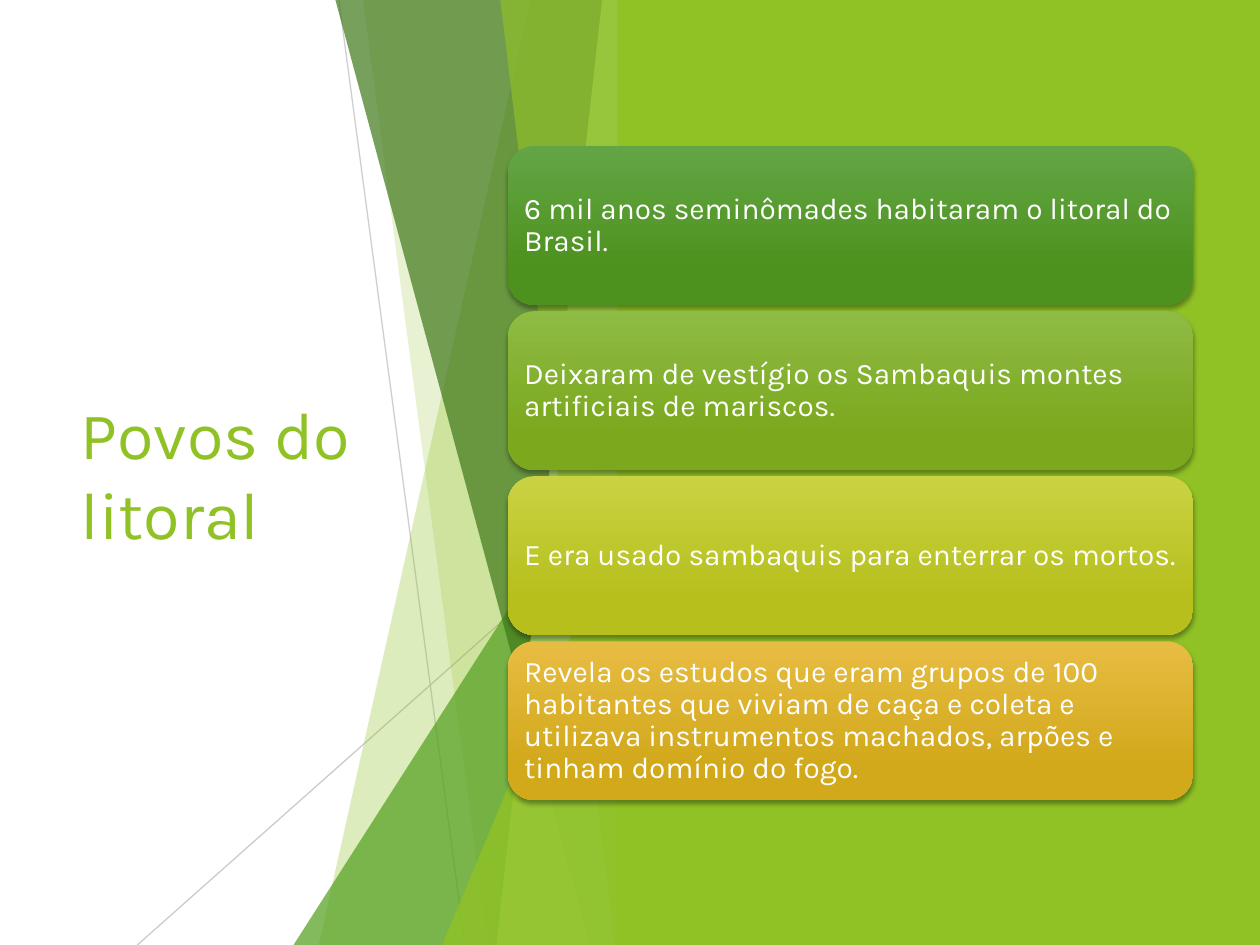
from dataclasses import dataclass

from lxml import etree
from pptx import Presentation
from pptx.dml.color import RGBColor
from pptx.enum.shapes import MSO_CONNECTOR, MSO_SHAPE
from pptx.enum.text import MSO_ANCHOR
from pptx.oxml import parse_xml
from pptx.oxml.ns import qn
from pptx.util import Inches, Pt

STRAIGHT = MSO_CONNECTOR.STRAIGHT
RECTANGLE = MSO_SHAPE.RECTANGLE
ROUNDED = MSO_SHAPE.ROUNDED_RECTANGLE
TRIANGLE = MSO_SHAPE.ISOSCELES_TRIANGLE
MIDDLE = MSO_ANCHOR.MIDDLE
DRAWING_NS = "http://schemas.openxmlformats.org/drawingml/2006/main"


@dataclass(frozen=True)
class Theme:
    font: str = "Karla"
    title_size: float = 38
    card_size: float = 17
    lime: str = "90C226"
    green: str = "54A021"
    dark_green: str = "3F7819"
    pale_lime: str = "C0E474"
    gray: str = "BFBFBF"
    white: str = "FFFFFF"


@dataclass(frozen=True)
class Ray:
    start: tuple[float, float]
    end: tuple[float, float]
    opacity: int


@dataclass(frozen=True)
class Band:
    """A strip slanting from its top left to its bottom left corner."""
    top_left: float
    bottom_left: float
    color: str
    opacity: int


@dataclass(frozen=True)
class Wedge:
    """A right triangle standing on the bottom edge of the slide."""
    left: float
    top: float
    color: str
    opacity: int


@dataclass(frozen=True)
class Card:
    text: str
    light: str
    dark: str


THEME = Theme()
SLIDE_WIDTH, SLIDE_HEIGHT = 10, 7.5
FACET_RIGHT, FACET_TOP = 5, -0.01
CARD_LEFT, CARD_TOP, CARD_WIDTH, CARD_HEIGHT, CARD_PITCH = 4.03, 1.16, 5.44, 1.26, 1.31
CARD_PADDING = 0.06

RAYS = [
    Ray((2.69, 0), (3.69, 7.5), 75),
    Ray((5, 4.03), (1.09, 7.5), 80),
]
FACETS = [
    Band(4.21, 2.53, THEME.lime, 30),
    Band(2.88, 3.87, THEME.lime, 20),
    Wedge(2.33, 3.33, THEME.green, 72),
    Band(2.66, 4.68, THEME.dark_green, 70),
    Band(4.78, 3.94, THEME.pale_lime, 70),
    Band(3.97, 4.88, THEME.lime, 65),
    Wedge(3.51, 3.93, THEME.lime, 80),
]
CARDS = [
    Card("6 mil anos seminômades habitaram o litoral do Brasil.", "63A545", "4D921E"),
    Card("Deixaram de vestígio os Sambaquis montes artificiais de mariscos.",
         "8EBB44", "7BA81D"),
    Card("E era usado sambaquis para enterrar os mortos.", "CAD243", "B6BF1B"),
    Card("Revela os estudos que eram grupos de 100 habitantes que viviam de caça e coleta "
         "e utilizava instrumentos machados, arpões e tinham domínio do fogo.",
         "E7BC43", "D2A91B"),
]


def set_opacity(shape, percent: int) -> None:
    color = next(shape._element.spPr.iter(qn("a:srgbClr")))
    etree.SubElement(color, qn("a:alpha"), val=str(percent * 1000))


def paint(shape, color: str, opacity: int = 100) -> None:
    shape.shadow.inherit = False
    shape.line.fill.background()
    shape.fill.solid()
    shape.fill.fore_color.rgb = RGBColor.from_string(color)
    if opacity < 100:
        set_opacity(shape, opacity)


def add_ray(slide, ray: Ray) -> None:
    line = slide.shapes.add_connector(STRAIGHT, *map(Inches, ray.start + ray.end))
    line.line.color.rgb = RGBColor.from_string(THEME.gray)
    line.line.width = Pt(0.75)
    set_opacity(line, ray.opacity)
    etree.SubElement(line._element.spPr, qn("a:effectLst"))


def add_band(slide, band: Band) -> None:
    corners = [(FACET_RIGHT, FACET_TOP), (FACET_RIGHT, SLIDE_HEIGHT),
               (band.bottom_left, SLIDE_HEIGHT)]
    builder = slide.shapes.build_freeform(Inches(band.top_left), Inches(FACET_TOP))
    builder.add_line_segments([(Inches(x), Inches(y)) for x, y in corners])
    paint(builder.convert_to_shape(), band.color, band.opacity)


def add_wedge(slide, wedge: Wedge) -> None:
    shape = slide.shapes.add_shape(
        TRIANGLE, Inches(wedge.left), Inches(wedge.top),
        Inches(FACET_RIGHT - wedge.left), Inches(SLIDE_HEIGHT - wedge.top))
    shape.adjustments[0] = 1
    paint(shape, wedge.color, wedge.opacity)


def add_text(slide, box: tuple[float, ...], text: str, size: float, color: str,
             frame_format: dict, paragraph_format: dict) -> None:
    frame = slide.shapes.add_textbox(*map(Inches, box)).text_frame
    paragraph = frame.paragraphs[0]
    run = paragraph.add_run()
    run.text = text
    run.font.color.rgb = RGBColor.from_string(color)
    formats = [
        (frame, {"word_wrap": True, "vertical_anchor": MIDDLE, **frame_format}),
        (paragraph, paragraph_format),
        (run.font, {"name": THEME.font, "size": Pt(size)}),
    ]
    for target, values in formats:
        for name, value in values.items():
            setattr(target, name, value)


def add_card(slide, card: Card, top: float) -> None:
    shape = slide.shapes.add_shape(ROUNDED, Inches(CARD_LEFT), Inches(top),
                                   Inches(CARD_WIDTH), Inches(CARD_HEIGHT))
    shape.line.fill.background()
    shape.fill.gradient()
    shape.fill.gradient_angle = 270
    stops = zip(shape.fill.gradient_stops, (0, 0.78), (card.light, card.dark))
    for stop, position, color in stops:
        stop.position = position
        stop.color.rgb = RGBColor.from_string(color)
    shape._element.spPr.append(parse_xml(
        f'<a:effectLst xmlns:a="{DRAWING_NS}">'
        f'<a:outerShdw blurRad="{Pt(3)}" dist="{Pt(2)}" dir="5400000" rotWithShape="0">'
        '<a:srgbClr val="000000"><a:alpha val="35000"/></a:srgbClr>'
        '</a:outerShdw></a:effectLst>'))

    inset = Inches(0.07)
    sides = ("left", "top", "right", "bottom")
    box = (CARD_LEFT + CARD_PADDING, top + CARD_PADDING,
           CARD_WIDTH - 2 * CARD_PADDING, CARD_HEIGHT - 2 * CARD_PADDING)
    add_text(slide, box, card.text, THEME.card_size, THEME.white,
             {f"margin_{side}": inset for side in sides},
             {"line_spacing": 0.9})


def main() -> None:
    presentation = Presentation()
    presentation.slide_width = Inches(SLIDE_WIDTH)
    presentation.slide_height = Inches(SLIDE_HEIGHT)
    slide = presentation.slides.add_slide(presentation.slide_layouts[6])

    # Title
    add_text(slide, (0.54, 1.51, 2.91, 4.48), "Povos do litoral",
             THEME.title_size, THEME.lime, {}, {})

    # Faceted divider
    for ray in RAYS:
        add_ray(slide, ray)
    for facet in FACETS:
        if isinstance(facet, Band):
            add_band(slide, facet)
        else:
            add_wedge(slide, facet)

    # Right panel
    panel = slide.shapes.add_shape(RECTANGLE, Inches(4.9), 0,
                                   Inches(5.1), Inches(SLIDE_HEIGHT))
    paint(panel, THEME.lime)

    # Cards
    for index, card in enumerate(CARDS):
        add_card(slide, card, CARD_TOP + index * CARD_PITCH)

    presentation.save("out.pptx")


if __name__ == "__main__":
    main()
